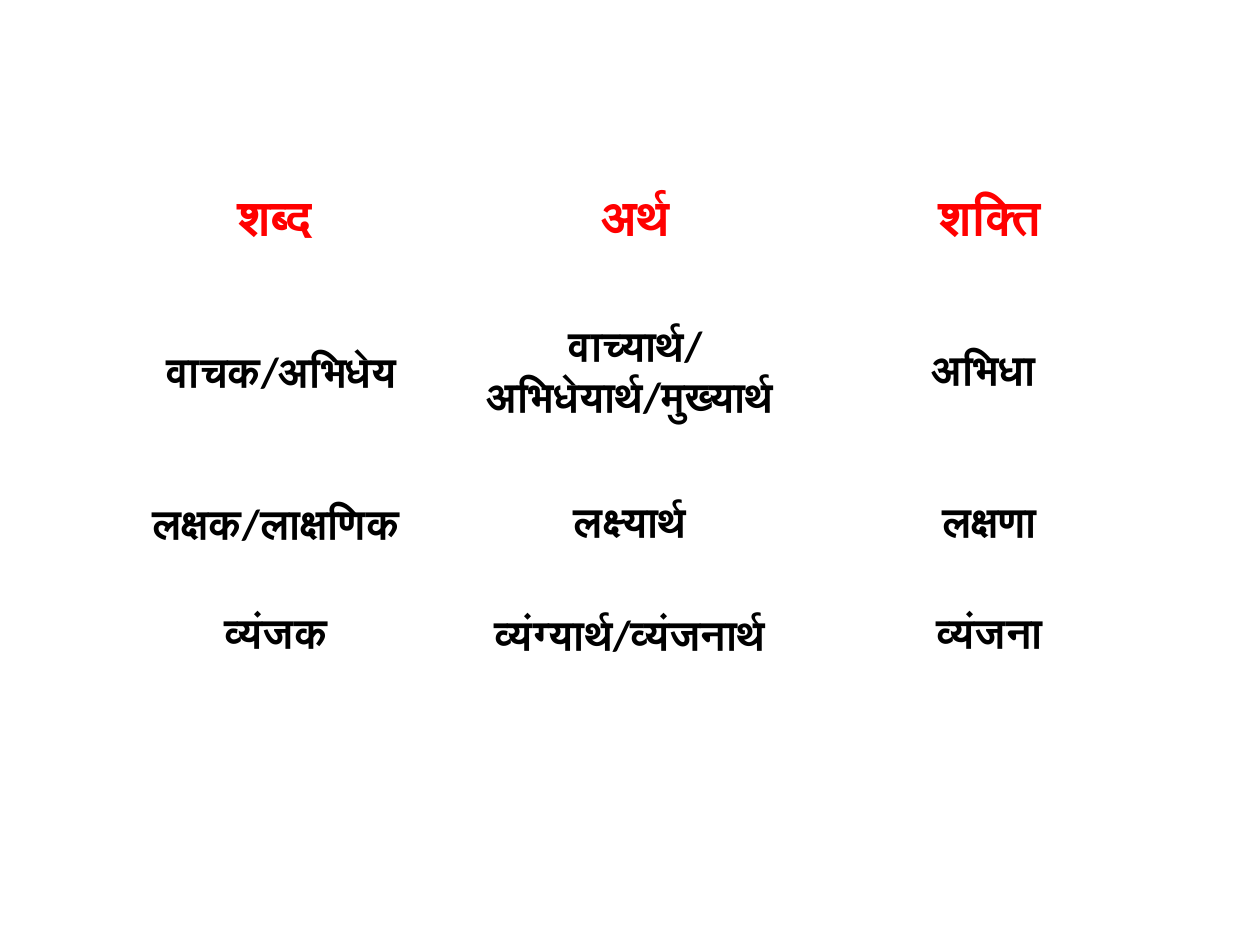
from dataclasses import dataclass

from pptx import Presentation
from pptx.dml.color import RGBColor
from pptx.enum.text import MSO_ANCHOR, PP_ALIGN
from pptx.util import Inches, Pt


@dataclass(frozen=True)
class Theme:
    font: str = "Calibri"
    heading_color: RGBColor = RGBColor(0xFF, 0x00, 0x00)
    body_color: RGBColor = RGBColor(0x00, 0x00, 0x00)
    heading_size: Pt = Pt(28)
    body_size: Pt = Pt(24)


THEME = Theme()

WORD_POWERS = [
    ["शब्द ", "अर्थ", "शक्ति"],
    ["वाचक/अभिधेय", "वाच्यार्थ/अभिधेयार्थ/मुख्यार्थ ", "अभिधा "],
    ["लक्षक/लाक्षणिक ", "लक्ष्यार्थ ", "लक्षणा"],
    ["व्यंजक ", "व्यंग्यार्थ/व्यंजनार्थ ", "व्यंजना"],
]
ROW_HEIGHTS = [0.88, 1.54, 0.88, 0.88]
COLUMN_WIDTH = 2.81


def fill_cell(cell, text, size, color):
    cell.fill.background()
    cell.vertical_anchor = MSO_ANCHOR.MIDDLE
    para = cell.text_frame.paragraphs[0]
    para.alignment = PP_ALIGN.CENTER
    span = para.add_run()
    span.text = text
    span.font.name = THEME.font
    span.font.size = size
    span.font.bold = True
    span.font.color.rgb = color


def add_word_table(page, left, top):
    column_count = len(WORD_POWERS[0])
    table = page.shapes.add_table(
        len(WORD_POWERS), column_count, Inches(left), Inches(top),
        Inches(COLUMN_WIDTH * column_count), Inches(sum(ROW_HEIGHTS)),
    ).table
    table.first_row = False
    table.horz_banding = False
    for column in table.columns:
        column.width = Inches(COLUMN_WIDTH)
    for row_index, (words, height) in enumerate(zip(WORD_POWERS, ROW_HEIGHTS)):
        table.rows[row_index].height = Inches(height)
        is_heading = row_index == 0
        size = THEME.heading_size if is_heading else THEME.body_size
        color = THEME.heading_color if is_heading else THEME.body_color
        for column_index, text in enumerate(words):
            fill_cell(table.cell(row_index, column_index), text, size, color)


def main():
    deck = Presentation()
    deck.slide_width = Inches(10)
    deck.slide_height = Inches(7.5)
    page = deck.slides.add_slide(deck.slide_layouts[6])
    add_word_table(page, left=0.83, top=1.31)
    deck.save("out.pptx")


if __name__ == "__main__":
    main()
